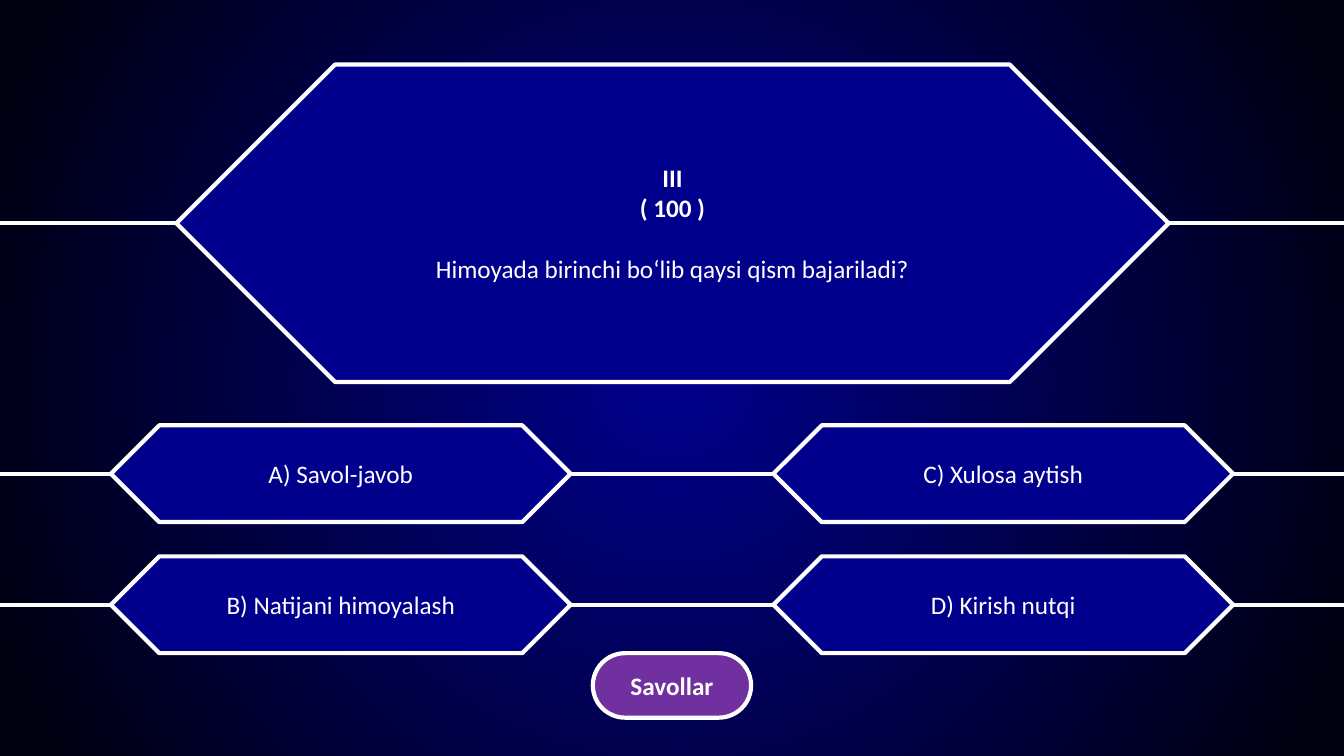
import pptx
import pptx.dml.color
import pptx.enum.shapes
import pptx.enum.text
import pptx.oxml
import pptx.oxml.ns
import pptx.util
from pptx.util import Inches

NAVY = pptx.dml.color.RGBColor(0x00, 0x00, 0x8D)
MIDNIGHT = pptx.dml.color.RGBColor(0x00, 0x00, 0x10)
PURPLE = pptx.dml.color.RGBColor(0x70, 0x30, 0xA0)
WHITE = pptx.dml.color.RGBColor(0xFF, 0xFF, 0xFF)
SHAPES = pptx.enum.shapes.MSO_SHAPE
WIDTH, HEIGHT = 13.33, 7.5
NAMESPACE = pptx.oxml.ns.nsdecls("a")

QUESTION = [("III", True, 0), ("( 100 )", True, 0),
            ("Himoyada birinchi bo‘lib qaysi qism bajariladi?", False, 22)]
ANSWERS = [["A) Savol-javob", "C) Xulosa aytish"],
           ["B) Natijani himoyalash", "D) Kirish nutqi"]]


def paint_background(slide):
    """Fill the slide with a circular gradient, brightest in the centre."""
    fill = slide.background.fill
    fill.gradient()
    for stop, color, position in zip(fill.gradient_stops, (NAVY, MIDNIGHT), (0, 0.95)):
        stop.color.rgb = color
        stop.position = position
    gradient = next(slide.element.iter(pptx.oxml.ns.qn("a:gradFill")))
    linear = gradient.find(pptx.oxml.ns.qn("a:lin"))
    if linear is not None:
        gradient.remove(linear)
    gradient.append(pptx.oxml.parse_xml(
        f'<a:path {NAMESPACE} path="circle">'
        '<a:fillToRect l="50000" t="50000" r="50000" b="50000"/></a:path>'))


def add_rail(slide, middle):
    """Draw a white line across the whole slide at the given height."""
    rail = slide.shapes.add_connector(
        pptx.enum.shapes.MSO_CONNECTOR.STRAIGHT,
        Inches(WIDTH), Inches(middle), Inches(0), Inches(middle))
    rail.line.color.rgb = WHITE
    rail.line.width = pptx.util.Pt(3)
    rail.element.spPr.append(pptx.oxml.parse_xml(f"<a:effectLst {NAMESPACE}/>"))


def add_panel(slide, box, kind, adjustments, color, lines):
    """Add an outlined shape with centred lines of (text, bold, space before)."""
    panel = slide.shapes.add_shape(kind, *map(Inches, box))
    for index, value in enumerate(adjustments):
        panel.adjustments[index] = value
    panel.shadow.inherit = False
    panel.fill.solid()
    panel.fill.fore_color.rgb = color
    panel.line.color.rgb = WHITE
    panel.line.width = pptx.util.Pt(3)
    frame = panel.text_frame
    frame.word_wrap = True
    frame.vertical_anchor = pptx.enum.text.MSO_ANCHOR.MIDDLE
    for index, (text, bold, space) in enumerate(lines):
        para = frame.add_paragraph() if index else frame.paragraphs[0]
        para.text = text
        para.alignment = pptx.enum.text.PP_ALIGN.CENTER
        if space:
            para.space_before = pptx.util.Pt(space)
        para.font.name = "Calibri"
        para.font.size = pptx.util.Pt(18)
        para.font.bold = bold
        para.font.color.rgb = WHITE


def add_glow(slide, x, y, size):
    """Add a white dot with soft edges centred on a point."""
    dot = slide.shapes.add_shape(
        SHAPES.OVAL, Inches(x - size / 2), Inches(y - size / 2), Inches(size), Inches(size))
    dot.fill.solid()
    dot.fill.fore_color.rgb = WHITE
    dot.line.fill.background()
    dot.element.spPr.append(pptx.oxml.parse_xml(
        f'<a:effectLst {NAMESPACE}><a:softEdge rad="{Inches(size / 3)}"/></a:effectLst>'))


def add_answers(slide, box):
    """Place the grid of answers in the box, each row on its own rail."""
    left, top, width, height = box
    panel_width, panel_height = 4.56, 0.96
    for row, answers in enumerate(ANSWERS):
        y = top + row * (height - panel_height)
        add_rail(slide, y + panel_height / 2)
        for column, answer in enumerate(answers):
            x = left + column * (width - panel_width)
            add_panel(slide, (x, y, panel_width, panel_height),
                      SHAPES.SNIP_2_DIAG_RECTANGLE, (0.5, 0.5), NAVY, [(answer, False, 0)])


def add_question(slide, box):
    """Place the question panel in the box, on a rail with a glow at its left tip."""
    left, top, width, height = box
    middle = top + height / 2
    add_rail(slide, middle)
    add_panel(slide, box, SHAPES.SNIP_2_DIAG_RECTANGLE, (0.5, 0.5), NAVY, QUESTION)
    for size in (0.3, 0.1):
        add_glow(slide, left, middle, size)


def main():
    """Build the quiz slide and save the deck."""
    deck = pptx.Presentation()
    deck.slide_width, deck.slide_height = Inches(WIDTH), Inches(HEIGHT)
    slide = deck.slides.add_slide(deck.slide_layouts[6])
    paint_background(slide)
    add_answers(slide, (1.1, 4.22, 11.13, 2.26))
    add_question(slide, (1.75, 0.64, 9.84, 3.15))
    add_panel(slide, (5.88, 6.48, 1.57, 0.64), SHAPES.ROUNDED_RECTANGLE, (0.5,),
              PURPLE, [("Savollar", True, 0)])
    deck.save("out.pptx")


if __name__ == "__main__":
    main()
